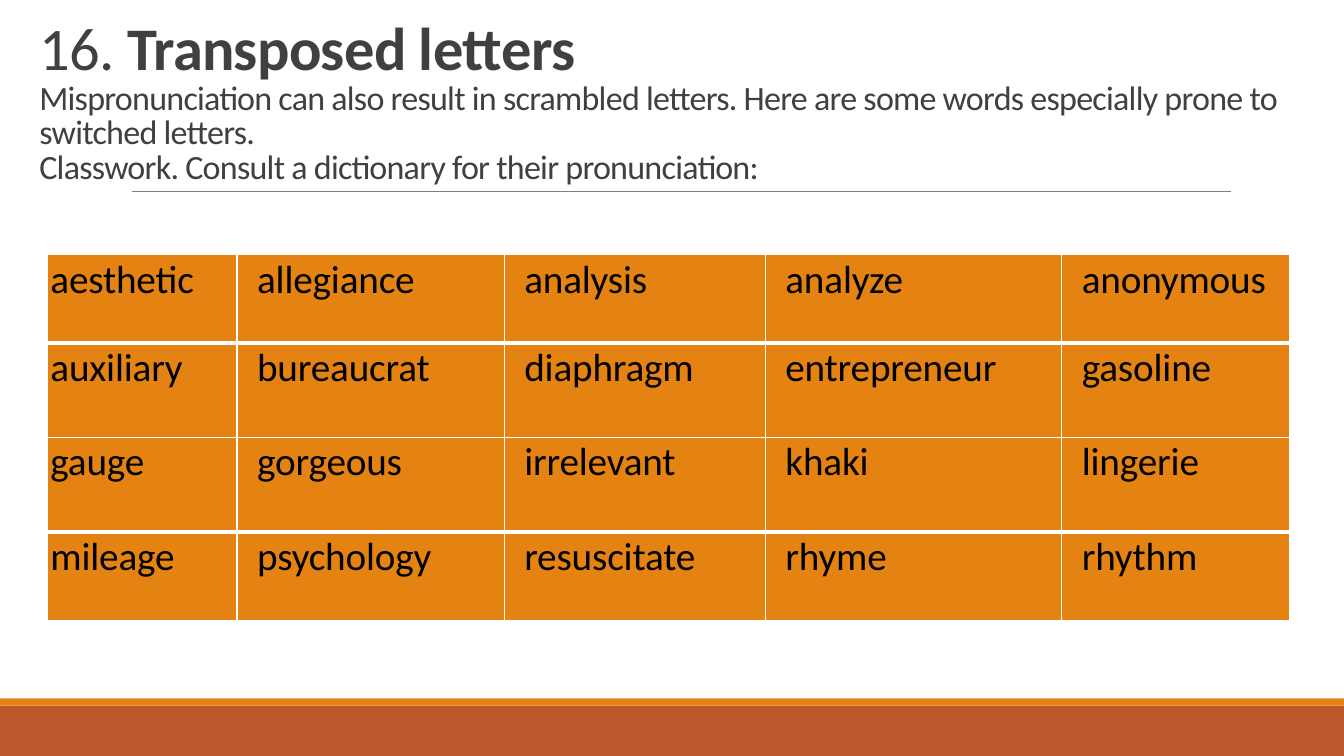
import pptx
import pptx.dml.color
import pptx.enum.shapes
import pptx.enum.text
import pptx.oxml
import pptx.oxml.ns
import pptx.util

NUMBER = "16. "
HEADING = "Transposed letters"
INTRO = [
    "Mispronunciation can also result in scrambled letters. "
    "Here are some words especially prone to switched letters.",
    "Classwork. Consult a dictionary for their pronunciation:",
]
WORDS = [
    ["aesthetic", "allegiance", "analysis", "analyze", "anonymous"],
    ["auxiliary", "bureaucrat", "diaphragm", "entrepreneur", "gasoline"],
    ["gauge", "gorgeous", "irrelevant", "khaki", "lingerie"],
    ["mileage", "psychology", "resuscitate", "rhyme", "rhythm"],
]
COL_WIDTHS = [1.88, 2.65, 2.59, 2.94, 2.26]
ROW_HEIGHTS = [0.88, 0.94, 0.94, 0.88]
ROW_EDGES = [1, 3, 1, 3, 1]  # points, from the top edge down
FONT = "Calibri"
ORANGE, RUST, WHITE = "E48312", "BD582C", "FFFFFF"
WIDTH, HEIGHT = 13.33, 7.5
BAND, STRIPE = 0.5, 0.07

inch, pt = pptx.util.Inches, pptx.util.Pt


def rgb(value):
    return pptx.dml.color.RGBColor.from_string(value)


def add_bar(s, top, height, color):
    bar = s.shapes.add_shape(pptx.enum.shapes.MSO_SHAPE.RECTANGLE,
                             0, inch(top), inch(WIDTH), inch(height))
    bar.shadow.inherit = False
    bar.fill.solid()
    bar.fill.fore_color.rgb = rgb(color)
    bar.line.fill.background()


def add_rule(s):
    line = s.shapes.add_connector(pptx.enum.shapes.MSO_CONNECTOR.STRAIGHT,
                                  inch(1.31), inch(1.9), inch(12.21), inch(1.9))
    line.line.color.rgb = rgb("808080")
    line.line.width = pt(0.5)
    line._element.spPr.append(pptx.oxml.parse_xml(
        f'<a:effectLst {pptx.oxml.ns.nsdecls("a")}/>'))


def add_run(p, text, spacing, size=None, bold=None):
    """Add a run with letter spacing in hundredths of a point."""
    r = p.add_run()
    r.text = text
    r.font.size = pt(size) if size else None
    r.font.bold = bold
    r._r.get_or_add_rPr().set("spc", str(spacing))


def fill_title(title):
    title.left, title.top = inch(0.29), inch(0.31)
    title.width, title.height = inch(12.68), inch(1.59)
    tf = title.text_frame
    tf.word_wrap = True
    tf.auto_size = pptx.enum.text.MSO_AUTO_SIZE.NONE
    tf.vertical_anchor = pptx.enum.text.MSO_ANCHOR.BOTTOM
    p = tf.paragraphs[0]
    p.alignment = pptx.enum.text.PP_ALIGN.LEFT
    p.line_spacing = 0.85
    p.font.name = FONT
    p.font.color.rgb = rgb("404040")
    add_run(p, NUMBER, -50, 43.2)
    add_run(p, HEADING, -50, 43.2, True)
    for text in INTRO:
        p.add_line_break()
        add_run(p, text, -50, 24.3)
    for r in p.runs:
        r.font.name = FONT
        r.font.color.rgb = rgb("404040")


def set_borders(cell, top, bottom):
    tc_pr = cell._tc.get_or_add_tcPr()
    for side, width in zip("LRTB", (1, 1, top, bottom)):
        tc_pr.append(pptx.oxml.parse_xml(
            f'<a:ln{side} {pptx.oxml.ns.nsdecls("a")} w="{pt(width)}">'
            f'<a:solidFill><a:srgbClr val="{WHITE}"/></a:solidFill></a:ln{side}>'))


def fill_cell(cell, word, row, col):
    set_borders(cell, ROW_EDGES[row], ROW_EDGES[row + 1])
    cell.fill.solid()
    cell.fill.fore_color.rgb = rgb(ORANGE)
    cell.margin_left = inch(0.2 if col else 0.03)
    cell.margin_right = cell.margin_bottom = 0
    cell.margin_top = pt(0.8 if row else 1.4)
    p = cell.text_frame.paragraphs[0]
    add_run(p, word, -10, 28)
    p.runs[0].font.name = FONT
    p.runs[0].font.color.rgb = rgb("000000")


def add_word_table(s):
    table = s.shapes.add_table(
        len(ROW_HEIGHTS), len(COL_WIDTHS), inch(0.47), inch(2.52),
        inch(sum(COL_WIDTHS)), inch(sum(ROW_HEIGHTS))).table
    table.first_row = table.horz_banding = False
    for column, width in zip(table.columns, COL_WIDTHS):
        column.width = inch(width)
    for row, height in zip(table.rows, ROW_HEIGHTS):
        row.height = inch(height)
    for i, words in enumerate(WORDS):
        for j, word in enumerate(words):
            fill_cell(table.cell(i, j), word, i, j)


def main():
    prs = pptx.Presentation()
    prs.slide_width, prs.slide_height = inch(WIDTH), inch(HEIGHT)
    s = prs.slides.add_slide(prs.slide_layouts[5])
    add_bar(s, HEIGHT - BAND, BAND, RUST)
    add_bar(s, HEIGHT - BAND - STRIPE, STRIPE, ORANGE)
    add_rule(s)
    fill_title(s.shapes.title)
    add_word_table(s)
    prs.save("out.pptx")


if __name__ == "__main__":
    main()
